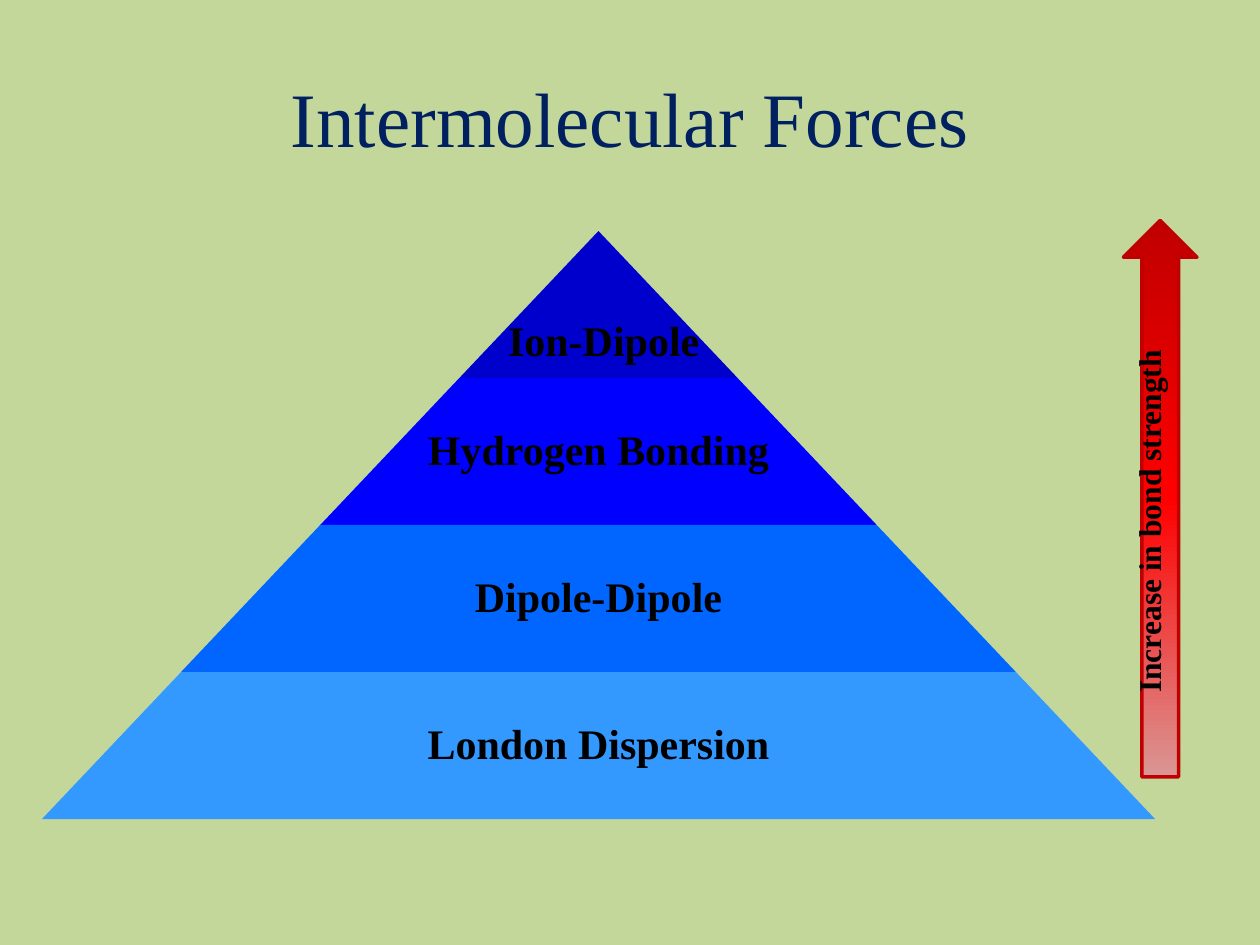
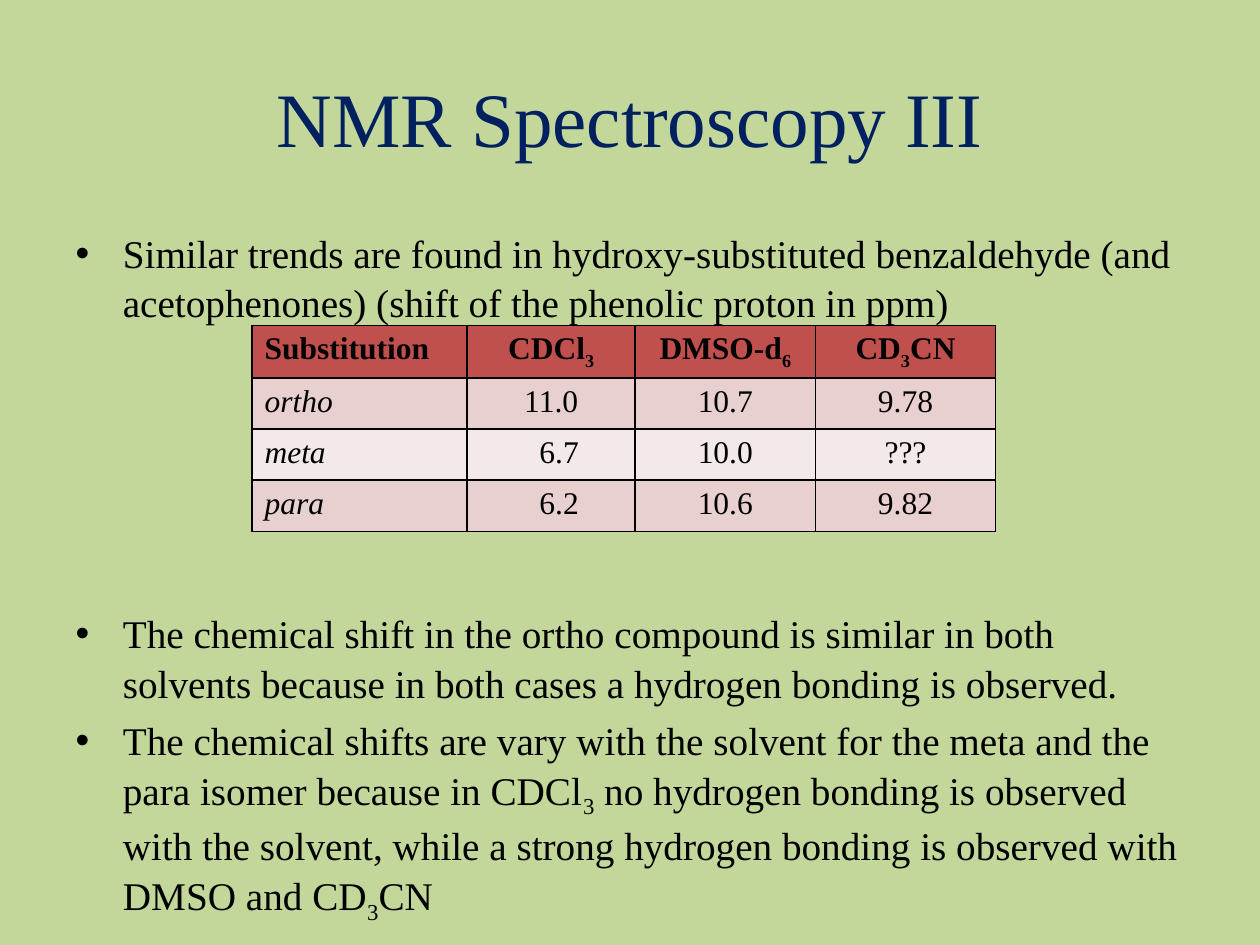
from copy import deepcopy

from lxml import etree
from pptx import Presentation
from pptx.dml.color import RGBColor
from pptx.enum import shapes, text
from pptx.oxml.ns import qn
from pptx.util import Pt

FONT = "Times New Roman"
BLACK = RGBColor(0x00, 0x00, 0x00)
NAVY = RGBColor(0x00, 0x20, 0x60)
SAGE = RGBColor(0xC3, 0xD7, 0x9B)
DARK_RED = RGBColor(0xC0, 0x00, 0x00)
RED = RGBColor(0xFF, 0x00, 0x00)
PALE_RED = RGBColor(0xD9, 0x96, 0x94)
HEADER_RED = RGBColor(0xC0, 0x50, 0x4D)
ROW_ROSE = RGBColor(0xE8, 0xD0, 0xD0)
ROW_BLUSH = RGBColor(0xF4, 0xE9, 0xE9)


def add_runs(paragraph, content, size, color=BLACK, bold=False, italic=False):
    """Add content run by run; parts between underscores become subscripts."""
    for i, part in enumerate(content.split("_")):
        if not part:
            continue
        run = paragraph.add_run()
        run.text = part
        run.font.name = FONT
        run.font.size = Pt(size)
        run.font.color.rgb = color
        run.font.bold = bold
        run.font.italic = italic
        if i % 2:
            run._r.get_or_add_rPr().set("baseline", "-25000")


def add_borders(cell):
    """Draw a 1 pt black line on all four sides of a table cell."""
    properties = cell._tc.get_or_add_tcPr()
    for i, side in enumerate(("a:lnL", "a:lnR", "a:lnT", "a:lnB")):
        border = etree.Element(qn(side), w=str(Pt(1)))
        solid = etree.SubElement(border, qn("a:solidFill"))
        etree.SubElement(solid, qn("a:srgbClr"), val=str(BLACK))
        properties.insert(i, border)


prs = Presentation()
prs.slide_width, prs.slide_height = Pt(720), Pt(540)
prs.slide_master.background.fill.solid()
prs.slide_master.background.fill.fore_color.rgb = SAGE

# Slides and titles
forces = prs.slides.add_slide(prs.slide_layouts[5])
nmr = prs.slides.add_slide(prs.slide_layouts[1])
for slide, heading in ((forces, "Intermolecular Forces"), (nmr, "NMR Spectroscopy III")):
    title = slide.shapes.title
    title.left, title.top, title.width, title.height = Pt(36), Pt(21.6), Pt(648), Pt(90)
    title.text_frame.vertical_anchor = text.MSO_ANCHOR.MIDDLE
    title.text_frame.paragraphs[0].alignment = text.PP_ALIGN.CENTER
    add_runs(title.text_frame.paragraphs[0], heading, 44, NAVY)

# Pyramid, strongest force on top
APEX_X, APEX_Y = 342, 132
TIER_HEIGHT, TIER_SPREAD = 84, 79.5
tiers = (
    ("Ion-Dipole", RGBColor(0x00, 0x00, 0xCC)),
    ("Hydrogen Bonding", RGBColor(0x00, 0x00, 0xFF)),
    ("Dipole-Dipole", RGBColor(0x00, 0x66, 0xFF)),
    ("London Dispersion", RGBColor(0x33, 0x99, 0xFF)),
)
for level, (force, blue) in enumerate(tiers):
    top = APEX_Y + level * TIER_HEIGHT
    bottom = top + TIER_HEIGHT
    upper, lower = level * TIER_SPREAD, (level + 1) * TIER_SPREAD
    outline = forces.shapes.build_freeform(Pt(APEX_X - lower), Pt(bottom), scale=1.0)
    outline.add_line_segments([
        (Pt(APEX_X - upper), Pt(top)),
        (Pt(APEX_X + upper), Pt(top)),
        (Pt(APEX_X + lower), Pt(bottom)),
    ], close=True)
    tier = outline.convert_to_shape()
    tier.shadow.inherit = False
    tier.fill.solid()
    tier.fill.fore_color.rgb = blue
    tier.line.fill.background()
    frame = tier.text_frame
    frame.word_wrap = True
    frame.vertical_anchor = text.MSO_ANCHOR.MIDDLE
    frame.margin_top = frame.margin_bottom = Pt(2)
    frame.margin_left = frame.margin_right = Pt(0.36 * lower)
    if level == 0:  # push the label down to the wide part of the tip
        frame.margin_top, frame.margin_left, frame.margin_right = Pt(46), Pt(8), Pt(2)
    label = frame.paragraphs[0]
    label.alignment = text.PP_ALIGN.CENTER
    label.line_spacing = 0.9
    add_runs(label, force, 24, bold=True)

# Bond strength arrow
arrow = forces.shapes.add_shape(
    shapes.MSO_SHAPE.UP_ARROW, Pt(642), Pt(126), Pt(42), Pt(318))
arrow.shadow.inherit = False
arrow.line.color.rgb = DARK_RED
arrow.line.width = Pt(2)
arrow.fill.gradient()
arrow.fill.gradient_angle = 270
stop_list = arrow._element.spPr.find(".//" + qn("a:gsLst"))
stop_list.append(deepcopy(stop_list[0]))
for stop, position, color in zip(
        arrow.fill.gradient_stops, (0, 0.5, 1), (DARK_RED, RED, PALE_RED)):
    stop.position = position
    stop.color.rgb = color

strength = forces.shapes.add_textbox(Pt(642), Pt(198), Pt(36), Pt(205)).text_frame
strength.word_wrap = False
strength._txBody.bodyPr.set("vert", "vert270")
add_runs(strength.paragraphs[0], "Increase in bond strength", 18, bold=True)

# Findings, with room for the table after the first one
TABLE_GAP = 161
findings = (
    ("Similar trends are found in hydroxy-substituted benzaldehyde (and acetophenones) "
     "(shift of the phenolic proton in ppm)", 4.5),
    ("The chemical shift in the ortho compound is similar in both solvents because "
     "in both cases a hydrogen bonding is observed.", TABLE_GAP),
    ("The chemical shifts are vary with the solvent for the meta and the para isomer "
     "because in CDCl_3_ no hydrogen bonding is observed with the solvent, while a "
     "strong hydrogen bonding is observed with DMSO and CD_3_CN", 4.5),
)
body = nmr.placeholders[1]
body.left, body.top, body.width, body.height = Pt(36), Pt(126), Pt(648), Pt(356.4)
body.text_frame.auto_size = text.MSO_AUTO_SIZE.NONE
for i, (finding, gap) in enumerate(findings):
    frame = body.text_frame
    paragraph = frame.add_paragraph() if i else frame.paragraphs[0]
    paragraph.space_before = Pt(gap)
    paragraph.line_spacing = 1.05
    add_runs(paragraph, finding, 22.4)

# Chemical shifts by solvent
shifts = (
    ("Substitution", "CDCl_3_", "DMSO-d_6_", "CD_3_CN"),
    ("ortho", "11.0", "10.7", "9.78"),
    ("meta", "6.7", "10.0", "???"),
    ("para", "6.2", "10.6", "9.82"),
)
column_widths = (123, 96, 103, 103)
table = nmr.shapes.add_table(
    len(shifts), len(column_widths), Pt(144), Pt(186), Pt(sum(column_widths)), Pt(116.8)).table
for column, width in zip(table.columns, column_widths):
    column.width = Pt(width)
for r, row in enumerate(shifts):
    for c, value in enumerate(row):
        cell = table.cell(r, c)
        cell.fill.solid()
        cell.fill.fore_color.rgb = (HEADER_RED, ROW_ROSE, ROW_BLUSH, ROW_ROSE)[r]
        add_borders(cell)
        paragraph = cell.text_frame.paragraphs[0]
        if c:
            paragraph.alignment = text.PP_ALIGN.CENTER
        if c == 1 and r > 1:  # line the single digits up with 11.0
            cell.margin_left = Pt(16.2)
        add_runs(paragraph, value, 18, bold=r == 0, italic=r > 0 and c == 0)

prs.save("out.pptx")
